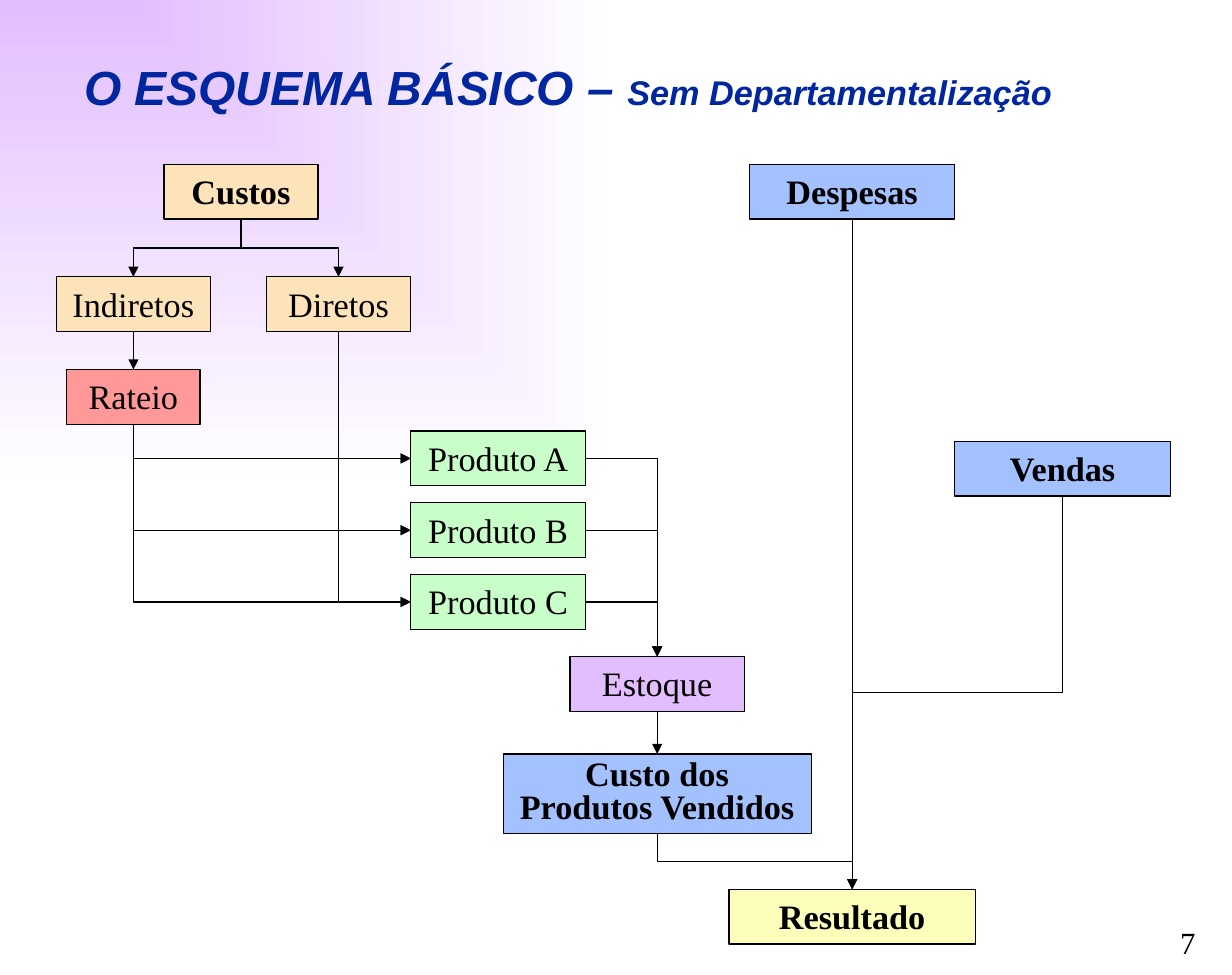
from lxml import etree
from pptx import Presentation
from pptx import util as u
from pptx.dml.color import RGBColor
from pptx.enum import shapes, text
from pptx.oxml.ns import qn

Cm = u.Cm
TOP, LEFT, BOTTOM, RIGHT = range(4)  # connection sites of a rectangle


def rgb(value):
    return RGBColor.from_string(value)


def write(p, words, size=20, font="Times New Roman", color="000000", bold=False, italic=False):
    r = p.add_run()
    r.text = words
    r.font.size, r.font.name = u.Pt(size), font
    r.font.bold, r.font.italic = bold, italic
    r.font.color.rgb = rgb(color)


prs = Presentation()
prs.slide_width, prs.slide_height = u.Pt(720), u.Pt(570)
s = prs.slides.add_slide(prs.slide_layouts[5])

# Background: lilac in the top left corner, fading to white
fill = s.background.fill
fill.gradient()
for stop, color, position in zip(fill.gradient_stops, ("E3BEFF", "FFFFFF"), (0, 1)):
    stop.color.rgb = rgb(color)
    stop.position = position
grad = s.background._cSld.find(".//" + qn("a:gradFill"))
grad.remove(grad.find(qn("a:lin")))
fade = etree.SubElement(grad, qn("a:path"), path="rect")
etree.SubElement(fade, qn("a:fillToRect"), r="100000", b="100000")

# Title
title = s.shapes.title
title.left, title.top, title.width, title.height = Cm(1.48), Cm(1.06), Cm(20.96), Cm(1.43)
tf = title.text_frame
tf.auto_size = text.MSO_AUTO_SIZE.NONE
tf.vertical_anchor = text.MSO_ANCHOR.MIDDLE
p = tf.paragraphs[0]
p.alignment = text.PP_ALIGN.LEFT
heading = dict(font="Arial", color="00279F", bold=True, italic=True)
write(p, "O ESQUEMA BÁSICO – ", size=28, **heading)
write(p, "Sem Departamentalização", **heading)

# Page number
number = s.shapes.add_textbox(Cm(24.08), Cm(18.92), Cm(1.44), Cm(1.02))
number.text_frame.word_wrap = False
write(number.text_frame.paragraphs[0], "7", size=18)

# Boxes: text, centre x, top, width, height, fill, bold
ORANGE, BLUE, GREEN = "FDE3BA", "A2C1FE", "C8FEC8"
ROW = 1.13
boxes = [
    ("Custos", 4.97, 3.39, 3.18, ROW, ORANGE, True),
    ("Despesas", 17.57, 3.39, 4.23, ROW, BLUE, True),
    ("Indiretos", 2.75, 5.71, 3.18, ROW, ORANGE, False),
    ("Diretos", 6.98, 5.71, 2.96, ROW, ORANGE, False),
    ("Rateio", 2.75, 7.62, 2.75, ROW, "FF9999", False),
    ("Custo dos Produtos Vendidos", 13.55, 15.55, 6.35, 1.64, BLUE, True),
    ("Estoque", 13.55, 13.54, 3.6, ROW, "E3BEFF", False),
    ("Vendas", 21.91, 9.1, 4.45, ROW, BLUE, True),
    ("Resultado", 17.57, 18.34, 5.08, ROW, "FCFEB9", True),
]
products = ["Produto A", "Produto B", "Produto C"]
for i, name in enumerate(products):
    boxes.append((name, 10.27, 8.89 + 1.48 * i, 3.6, ROW, GREEN, False))

box = {}
for name, center, top, width, height, color, bold in boxes:
    sp = s.shapes.add_shape(shapes.MSO_SHAPE.RECTANGLE, Cm(center - width / 2), Cm(top),
                            Cm(width), Cm(height))
    sp.shadow.inherit = False
    sp.fill.solid()
    sp.fill.fore_color.rgb = rgb(color)
    sp.line.color.rgb = rgb("000000")
    sp.line.width = u.Pt(0.75)
    tf = sp.text_frame
    tf.word_wrap = True
    tf.vertical_anchor = text.MSO_ANCHOR.TOP
    p = tf.paragraphs[0]
    p.alignment = text.PP_ALIGN.CENTER
    if height > ROW:
        p.line_spacing = 0.8
    write(p, name, bold=bold)
    box[name] = sp

# Arrows: from, site, to, site
cost_of_sales = "Custo dos Produtos Vendidos"
arrows = [
    ("Custos", BOTTOM, "Indiretos", TOP),
    ("Custos", BOTTOM, "Diretos", TOP),
    ("Indiretos", BOTTOM, "Rateio", TOP),
    ("Despesas", BOTTOM, "Resultado", TOP),
    ("Estoque", BOTTOM, cost_of_sales, TOP),
    (cost_of_sales, BOTTOM, "Resultado", TOP),
    ("Vendas", BOTTOM, "Resultado", TOP),
]
for name in products:
    arrows += [("Rateio", BOTTOM, name, LEFT), ("Diretos", BOTTOM, name, LEFT),
               (name, RIGHT, "Estoque", TOP)]

for source, out, target, into in arrows:
    c = s.shapes.add_connector(shapes.MSO_CONNECTOR.ELBOW, 0, 0, 0, 0)
    c.begin_connect(box[source], out)
    c.end_connect(box[target], into)
    c.line.color.rgb = rgb("000000")
    c.line.width = u.Pt(0.75)
    etree.SubElement(c.line._get_or_add_ln(), qn("a:tailEnd"), type="triangle")
    spPr = c._element.spPr
    etree.SubElement(spPr, qn("a:effectLst"))

    dx, dy = c.end_x - c.begin_x, c.end_y - c.begin_y
    geometry = spPr.find(qn("a:prstGeom"))
    if abs(dx) < Cm(0.01):
        geometry.set("prst", "line")
        continue
    if (out, into) != (BOTTOM, TOP):
        geometry.set("prst", "bentConnector2")
    if out == BOTTOM:
        # A path that sets out downwards is a quarter turn about its centre
        mid_x, mid_y = c.begin_x + dx // 2, c.begin_y + dy // 2
        xfrm = spPr.find(qn("a:xfrm"))
        xfrm.attrib.clear()
        xfrm.set("rot", "16200000" if dx > 0 else "5400000")
        if dx > 0:
            xfrm.set("flipH", "1")
        c.left, c.top = mid_x - dy // 2, mid_y - abs(dx) // 2
        c.width, c.height = dy, abs(dx)

prs.save("out.pptx")
